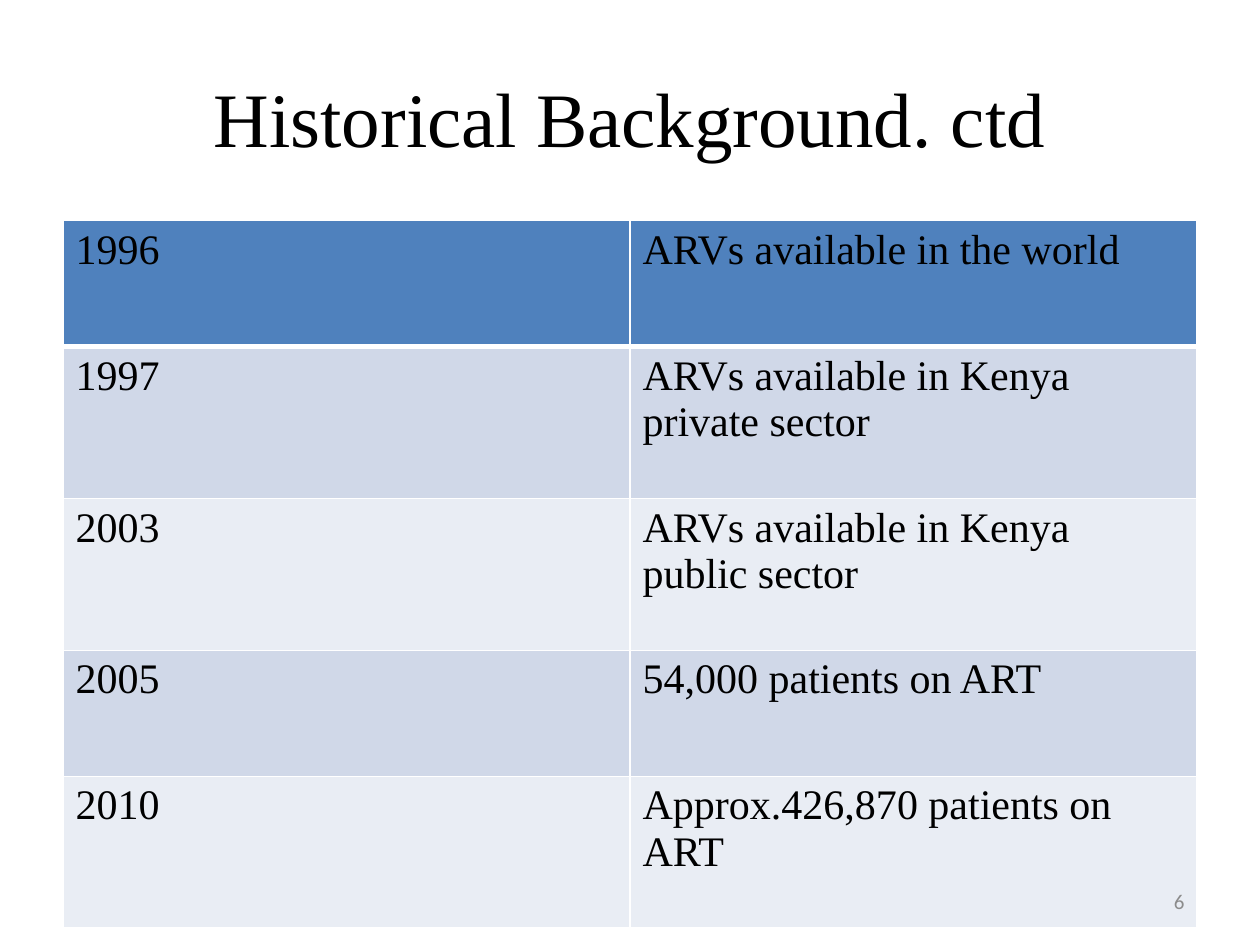
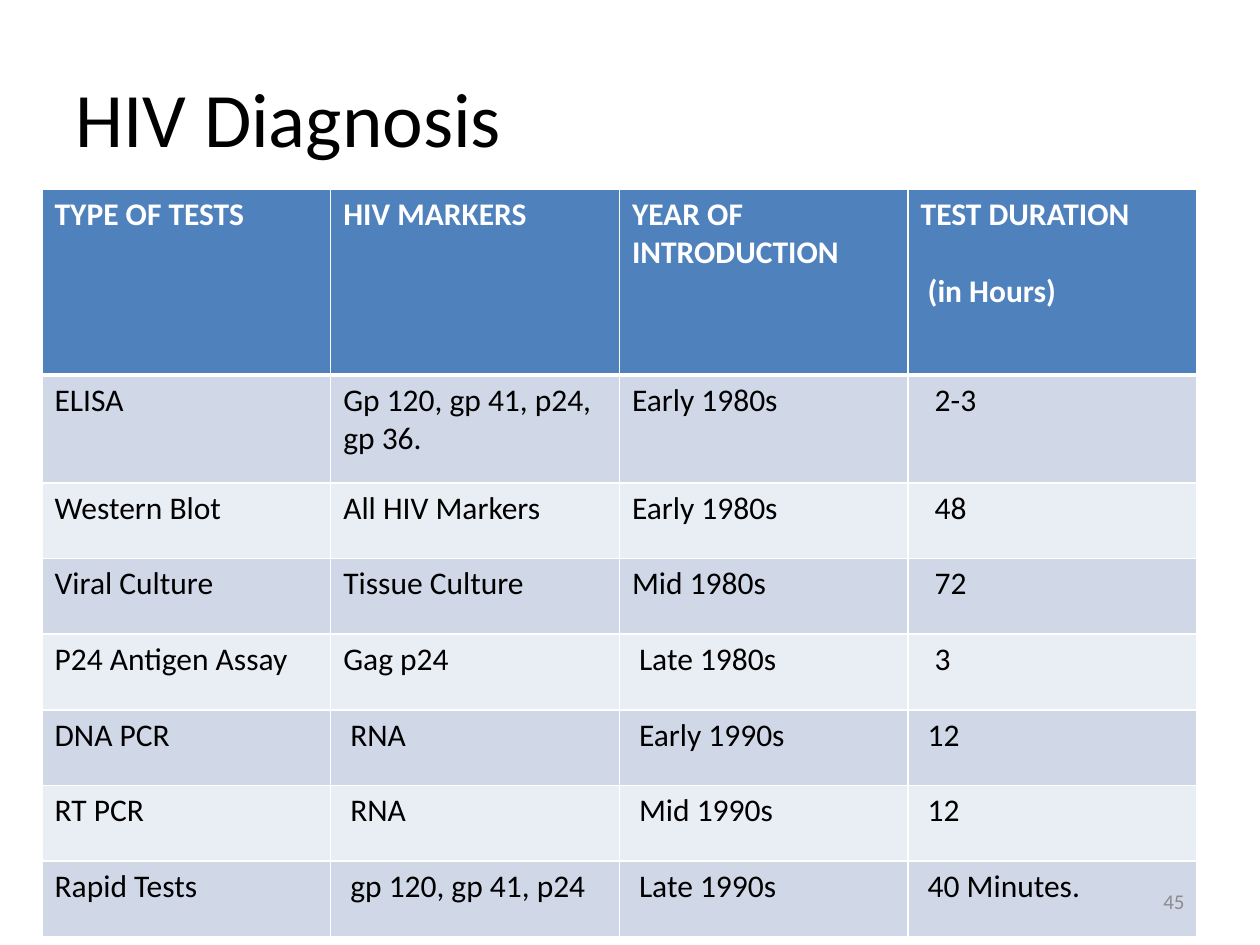
from lxml import etree
from pptx import Presentation
from pptx.dml.color import RGBColor
from pptx.enum.text import MSO_ANCHOR, PP_ALIGN
from pptx.oxml.ns import qn
from pptx.util import Pt

CENTER, JUSTIFY, RIGHT = PP_ALIGN.CENTER, PP_ALIGN.JUSTIFY, PP_ALIGN.RIGHT
MIDDLE = MSO_ANCHOR.MIDDLE

COLORS = {
    "text": "000000",
    "white": "FFFFFF",
    "header": "4F81BD",
    "odd_row": "D0D8E8",
    "even_row": "E9EDF4",
    "page_number": "8C8C8C",
}
SERIF, SANS = "Times New Roman", "Calibri"
TITLE_ONLY = 5
TITLE_BOX = (36, 21.6, 648, 90)
PAGE_NUMBER_BOX = (516, 500.4, 168, 28.8)
STEP = 4  # indent of one level in a table cell

HISTORY_ROWS = [
    ["1996", "ARVs available in the world"],
    ["1997", "ARVs available in Kenya private sector"],
    ["2003", "ARVs available in Kenya public sector"],
    ["2005", "54,000 patients on ART"],
    ["2010", "Approx.426,870 patients on ART"],
]
# A pair is a text and its indent level; a list holds several paragraphs.
TEST_ROWS = [
    ["TYPE OF TESTS", "HIV MARKERS", "YEAR OF INTRODUCTION",
     ["TEST DURATION", ("(in Hours)", 1)]],
    ["ELISA", "Gp 120, gp 41, p24, gp 36.", "Early 1980s", ("2-3", 2)],
    ["Western Blot", "All HIV Markers", "Early 1980s", ("48", 2)],
    ["Viral Culture", "Tissue Culture", "Mid 1980s", ("72", 2)],
    ["P24 Antigen Assay", "Gag p24", ("Late 1980s", 1), ("3", 2)],
    ["DNA PCR", ("RNA", 1), ("Early 1990s", 1), ("12", 1)],
    ["RT PCR", ("RNA", 1), ("Mid 1990s", 1), ("12", 1)],
    ["Rapid Tests", ("gp 120, gp 41, p24", 1), ("Late 1990s", 1), ("40 Minutes.", 1)],
]


def color(name):
    return RGBColor.from_string(COLORS[name])


def add_run(paragraph, text, font, size, color_name="text", bold=False):
    run = paragraph.add_run()
    run.text = text
    run.font.name = font
    run.font.size = Pt(size)
    run.font.bold = bold
    run.font.color.rgb = color(color_name)


def add_title(slide, box, text, font, alignment):
    title = slide.shapes.title
    title.left, title.top, title.width, title.height = map(Pt, box)
    title.text_frame.vertical_anchor = MIDDLE
    paragraph = title.text_frame.paragraphs[0]
    paragraph.alignment = alignment
    add_run(paragraph, text, font, 44)


def add_page_number(slide, box, number):
    frame = slide.shapes.add_textbox(*map(Pt, box)).text_frame
    frame.word_wrap = True
    frame.vertical_anchor = MIDDLE
    paragraph = frame.paragraphs[0]
    paragraph.alignment = RIGHT
    add_run(paragraph, str(number), SANS, 12, "page_number")


def set_borders(cell, top, bottom):
    """Draw white cell borders; top and bottom are widths in points."""
    properties = cell._tc.get_or_add_tcPr()
    for side, width in (("L", 1), ("R", 1), ("T", top), ("B", bottom)):
        line = etree.SubElement(properties, qn("a:ln" + side), w=str(Pt(width)))
        fill = etree.SubElement(line, qn("a:solidFill"))
        etree.SubElement(fill, qn("a:srgbClr"), val=COLORS["white"])


def fill_cell(cell, content, font, size, color_name, bold):
    items = content if isinstance(content, list) else [content]
    for index, item in enumerate(items):
        text, level = item if isinstance(item, tuple) else (item, 0)
        if index == 0:
            paragraph = cell.text_frame.paragraphs[0]
        else:
            paragraph = cell.text_frame.add_paragraph()
            paragraph.space_before = Pt(22)
        if level:
            paragraph._p.get_or_add_pPr().set("marL", str(Pt(level * STEP)))
        add_run(paragraph, text, font, size, color_name, bold)


def add_banded_table(slide, box, rows, heights, font, size, header_color, header_bold):
    left, top, width = box
    column_count = len(rows[0])
    table = slide.shapes.add_table(
        len(rows), column_count, Pt(left), Pt(top), Pt(width), Pt(sum(heights))).table
    for column in table.columns:
        column.width = Pt(width / column_count)
    for row_index, (contents, height) in enumerate(zip(rows, heights)):
        table.rows[row_index].height = Pt(height)
        header = row_index == 0
        band = "header" if header else "odd_row" if row_index % 2 else "even_row"
        for column_index, content in enumerate(contents):
            cell = table.cell(row_index, column_index)
            set_borders(cell, 3 if row_index == 1 else 1, 3 if header else 1)
            cell.fill.solid()
            cell.fill.fore_color.rgb = color(band)
            fill_cell(cell, content, font, size,
                      header_color if header else "text", header and header_bold)


def add_slide(presentation):
    return presentation.slides.add_slide(presentation.slide_layouts[TITLE_ONLY])


def build_history_slide(presentation):
    slide = add_slide(presentation)
    add_title(slide, TITLE_BOX, "Historical Background. ctd", SERIF, CENTER)
    add_banded_table(slide, (36, 126, 648), HISTORY_ROWS, [72, 86.8, 86.8, 72, 86.8],
                     SERIF, 24, "text", False)
    add_page_number(slide, PAGE_NUMBER_BOX, 6)


def build_diagnosis_slide(presentation):
    slide = add_slide(presentation)
    add_title(slide, TITLE_BOX, "HIV Diagnosis", SANS, JUSTIFY)
    add_banded_table(slide, (24, 108, 660), TEST_ROWS, [106.2, 61.8] + [43.2] * 6,
                     SANS, 18, "white", True)
    add_page_number(slide, PAGE_NUMBER_BOX, 45)


def main():
    presentation = Presentation()
    presentation.slide_width, presentation.slide_height = Pt(720), Pt(540)
    build_history_slide(presentation)
    build_diagnosis_slide(presentation)
    presentation.save("out.pptx")


if __name__ == "__main__":
    main()
